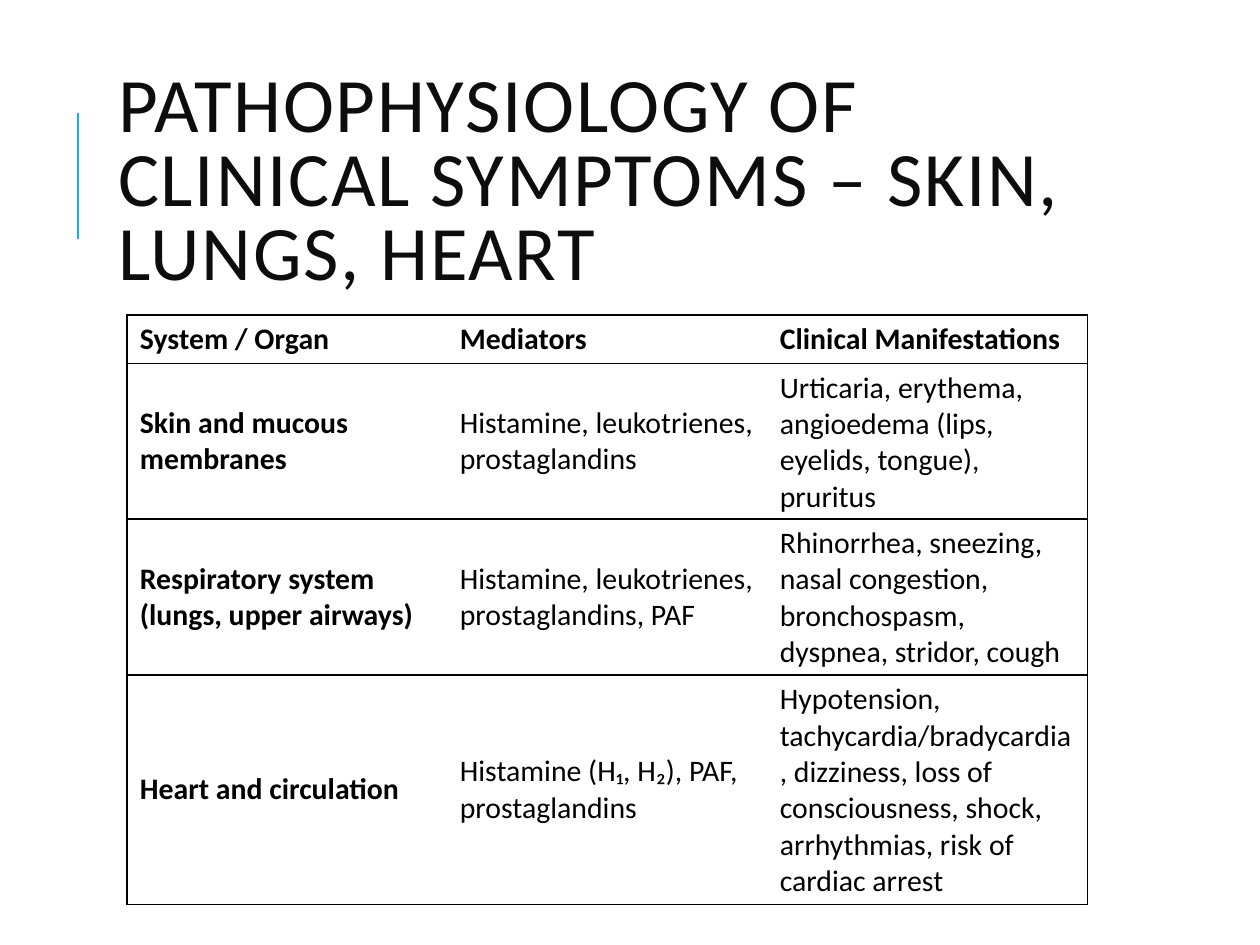
"""Build a slide on the pathophysiology of clinical symptoms in three organ systems."""
from dataclasses import dataclass

from lxml.etree import SubElement
from pptx import Presentation
from pptx.dml.color import RGBColor
from pptx.enum.shapes import MSO_CONNECTOR
from pptx.enum.text import MSO_ANCHOR
from pptx.oxml import parse_xml
from pptx.oxml.ns import nsdecls, qn
from pptx.util import Inches, Pt


@dataclass(frozen=True)
class Theme:
    font: str = "Calibri"
    accent: str = "1CADE4"
    heading: str = "0D0D0D"
    ink: str = "000000"
    paper: str = "FFFFFF"
    heading_size: float = 44
    table_size: float = 17
    accent_width: float = 1.5
    border_width: float = 1


def write_text(frame, text, *, font, size, color, bold=False, line_spacing=None, tracking=None):
    frame.word_wrap = True
    paragraph = frame.paragraphs[0]
    if line_spacing:
        paragraph.line_spacing = line_spacing
    run = paragraph.add_run()
    run.text = text
    run.font.name = font
    run.font.size = Pt(size)
    run.font.bold = bold
    run.font.color.rgb = RGBColor.from_string(color)
    if tracking:
        run.font._element.set("spc", str(int(tracking * 100)))


class SlideBuilder:
    def __init__(self, slide, theme):
        self.slide = slide
        self.theme = theme

    def rule(self, x, top, bottom):
        accent = self.slide.shapes.add_connector(
            MSO_CONNECTOR.STRAIGHT, Inches(x), Inches(bottom), Inches(x), Inches(top))
        accent.line.color.rgb = RGBColor.from_string(self.theme.accent)
        accent.line.width = Pt(self.theme.accent_width)
        SubElement(accent._element.spPr, qn("a:effectLst"))

    def title(self, text, left, top, width, height):
        heading = self.slide.shapes.add_textbox(
            Inches(left), Inches(top), Inches(width), Inches(height))
        heading.text_frame.vertical_anchor = MSO_ANCHOR.MIDDLE
        write_text(heading.text_frame, text, font=self.theme.font, size=self.theme.heading_size,
                   color=self.theme.heading, line_spacing=0.8, tracking=1)

    def borders(self, cell, visible):
        for position, side in enumerate("LRTB"):
            if side in visible:
                paint = f'<a:solidFill><a:srgbClr val="{self.theme.ink}"/></a:solidFill>'
            else:
                paint = "<a:noFill/>"
            edge = parse_xml(f'<a:ln{side} {nsdecls("a")} w="{Pt(self.theme.border_width)}">'
                             f"{paint}</a:ln{side}>")
            cell._tc.get_or_add_tcPr().insert(position, edge)

    def table(self, rows, left, top, column_width, row_heights):
        columns = len(rows[0])
        grid = self.slide.shapes.add_table(
            len(rows), columns, Inches(left), Inches(top),
            Inches(column_width * columns), Inches(sum(row_heights))).table
        grid.horz_banding = False
        for column in grid.columns:
            column.width = Inches(column_width)
        for r, (entries, height) in enumerate(zip(rows, row_heights)):
            grid.rows[r].height = Inches(height)
            for c, entry in enumerate(entries):
                cell = grid.cell(r, c)
                cell.vertical_anchor = MSO_ANCHOR.MIDDLE
                cell.fill.solid()
                cell.fill.fore_color.rgb = RGBColor.from_string(self.theme.paper)
                outer = "L" if c == 0 else "R" if c == columns - 1 else ""
                self.borders(cell, "TB" + outer)
                write_text(cell.text_frame, entry, font=self.theme.font,
                           size=self.theme.table_size, color=self.theme.ink,
                           bold=r == 0 or c == 0)


SYMPTOMS = [
    ("System / Organ", "Mediators", "Clinical Manifestations"),
    ("Skin and mucous membranes", "Histamine, leukotrienes, prostaglandins",
     "Urticaria, erythema, angioedema (lips, eyelids, tongue), pruritus"),
    ("Respiratory system (lungs, upper airways)",
     "Histamine, leukotrienes, prostaglandins, PAF",
     "Rhinorrhea, sneezing, nasal congestion, bronchospasm, dyspnea, stridor, cough"),
    ("Heart and circulation", "Histamine (H₁, H₂), PAF, prostaglandins",
     "Hypotension, tachycardia/bradycardia, dizziness, loss of consciousness, shock, "
     "arrhythmias, risk of cardiac arrest"),
]


def main():
    deck = Presentation()
    deck.slide_width, deck.slide_height = Inches(10), Inches(7.5)
    builder = SlideBuilder(deck.slides.add_slide(deck.slide_layouts[6]), Theme())
    builder.rule(0.62, 0.9, 1.9)
    builder.title("PATHOPHYSIOLOGY OF CLINICAL SYMPTOMS – SKIN, LUNGS, HEART",
                  0.84, 0.64, 7.97, 1.64)
    builder.table(SYMPTOMS, 1.01, 2.5, 2.54, [0.38, 0.96, 1.24, 1.82])
    deck.save("out.pptx")


if __name__ == "__main__":
    main()
